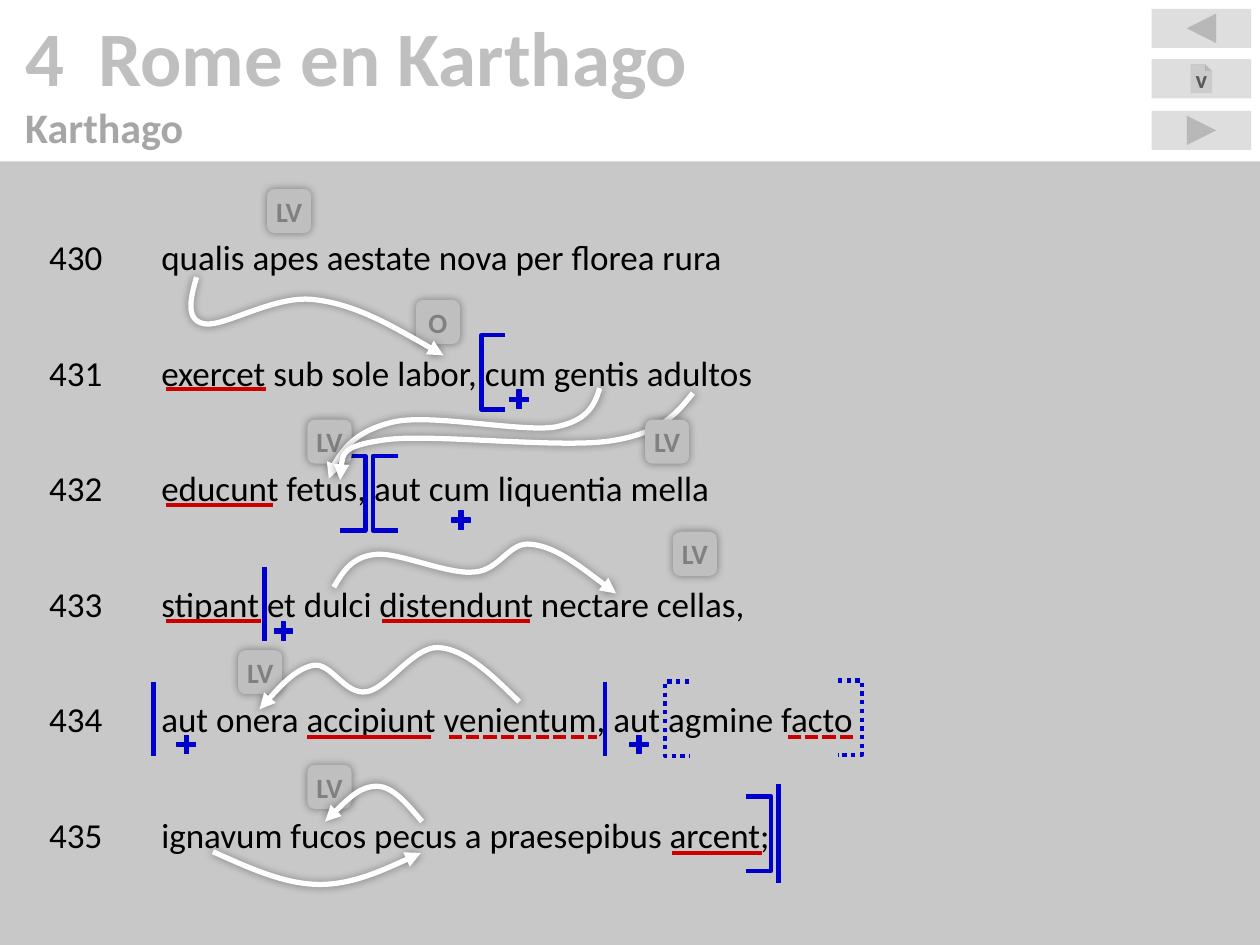
from lxml.etree import SubElement
from pptx import Presentation
from pptx.dml.color import RGBColor
from pptx.enum.dml import MSO_LINE
from pptx.enum.shapes import MSO_CONNECTOR, MSO_SHAPE
from pptx.enum.text import MSO_ANCHOR, MSO_AUTO_SIZE, PP_ALIGN
from pptx.oxml.ns import qn
from pptx.util import Inches, Pt

BLACK = RGBColor(0x00, 0x00, 0x00)
WHITE = RGBColor(0xFF, 0xFF, 0xFF)
BLUE = RGBColor(0x00, 0x00, 0xCC)
RED = RGBColor(0xCC, 0x00, 0x00)
SILVER = RGBColor(0xBF, 0xBF, 0xBF)
SUBTITLE_GRAY = RGBColor(0xA6, 0xA6, 0xA6)
BADGE_GRAY = RGBColor(0x80, 0x80, 0x80)
BUTTON_GRAY = RGBColor(0x59, 0x59, 0x59)

VERSES = [
    "430\tqualis apes aestate nova per florea rura",
    "431\texercet sub sole labor, cum gentis adultos",
    "432\teducunt fetus, aut cum liquentia mella",
    "433\tstipant et dulci distendunt nectare cellas,",
    "434\taut onera accipiunt venientum, aut agmine facto",
    "435\tignavum fucos pecus a praesepibus arcent;",
]
UNDERLINES = [
    (1, 1.32, 2.11, None),
    (2, 1.32, 2.17, None),
    (3, 1.32, 2.07, None),
    (3, 3.03, 4.21, None),
    (4, 2.44, 3.42, None),
    (4, 3.56, 4.74, MSO_LINE.SQUARE_DOT),
    (4, 6.25, 6.78, MSO_LINE.SQUARE_DOT),
    (5, 5.33, 6.05, None),
]
CLAUSE_BARS = [(6.18, 6.22, 7.01), (2.1, 4.5, 5.09), (1.22, 5.41, 6), (4.8, 5.41, 6)]
BRACKETS = [
    (3.82, 4.01, 2.66, None),
    (2.9, 2.7, 3.62, None),
    (2.96, 3.16, 3.62, None),
    (6.12, 5.92, 6.32, None),
    (5.28, 5.47, 5.41, MSO_LINE.ROUND_DOT),
    (6.84, 6.65, 5.4, MSO_LINE.ROUND_DOT),
]
PLUSES = [(4.02, 3.07), (3.56, 4.03), (2.15, 4.91), (1.38, 5.81), (4.97, 5.81)]
BADGES = [
    ("O", 3.3, 2.38),
    ("LV", 2.12, 1.5),
    ("LV", 2.44, 3.33),
    ("LV", 5.34, 4.22),
    ("LV", 1.89, 5.16),
    ("LV", 2.44, 6.07),
]
ARROWS = [
    [(1.56, 2.2), (1.51, 2.37), (1.47, 2.54), (1.62, 2.57), (1.78, 2.6),
     (2.19, 2.33), (2.51, 2.38), (2.83, 2.42), (3.17, 2.62), (3.52, 2.82)],
    [(4.76, 3.08), (4.72, 3.21), (4.67, 3.34), (4.4, 3.39), (4.13, 3.43),
     (3.41, 3.28), (3.12, 3.35), (2.82, 3.42), (2.61, 3.69), (2.61, 3.8)],
    [(5.5, 3.12), (5.37, 3.28), (5.25, 3.44), (4.84, 3.5), (4.43, 3.56),
     (3.41, 3.44), (3.06, 3.49), (2.7, 3.54), (2.7, 3.67), (2.7, 3.81)],
    [(2.65, 4.66), (2.72, 4.54), (2.79, 4.42), (2.98, 4.4), (3.16, 4.38),
     (3.55, 4.56), (3.76, 4.54), (3.97, 4.53), (4.04, 4.29), (4.22, 4.32),
     (4.41, 4.34), (4.65, 4.53), (4.89, 4.71)],
    [(4.12, 5.57), (3.91, 5.36), (3.69, 5.15), (3.48, 5.14), (3.28, 5.13),
     (3.07, 5.47), (2.91, 5.49), (2.74, 5.52), (2.63, 5.26), (2.49, 5.28),
     (2.35, 5.31), (2.2, 5.47), (2.06, 5.63)],
    [(3.35, 6.52), (3.23, 6.38), (3.12, 6.24), (2.99, 6.24), (2.86, 6.24),
     (2.72, 6.38), (2.58, 6.52)],
    [(1.69, 6.76), (1.98, 6.89), (2.26, 7.02), (2.54, 7.02), (2.81, 7.02),
     (3.21, 6.83), (3.34, 6.77)],
]


class VerseSlide:
    font_name = "Calibri"

    def __init__(self, deck):
        self.slide = deck.slides.add_slide(deck.slide_layouts[5])
        self.shapes = self.slide.shapes

    def style_text(self, para, size, color, bold=False):
        for span in para.runs:
            span.font.name = self.font_name
            span.font.size = Pt(size)
            span.font.bold = bold
            span.font.color.rgb = color

    def style_fill(self, shape, color, alpha=100):
        shape.fill.solid()
        shape.fill.fore_color.rgb = color
        if alpha < 100:
            tint = shape.fill._xPr.find(qn("a:solidFill"))[0]
            SubElement(tint, qn("a:alpha"), val=str(alpha * 1000))

    def style_line(self, shape, color, width, dash=None):
        shape.line.color.rgb = color
        shape.line.width = Pt(width)
        if dash is not None:
            shape.line.dash_style = dash

    def add_glow(self, shape):
        effects = shape._element.spPr.find(qn("a:effectLst"))
        shadow = SubElement(effects, qn("a:outerShdw"), blurRad=str(Pt(5)), dist="0", dir="0")
        color = SubElement(shadow, qn("a:srgbClr"), val=str(BLACK))
        SubElement(color, qn("a:alpha"), val="40000")

    def add_tab(self, para, position):
        properties = para._p.get_or_add_pPr()
        stops = SubElement(properties, qn("a:tabLst"))
        SubElement(stops, qn("a:tab"), pos=str(Inches(position)), algn="l")

    def place(self, box, left, top, width, height, inset_x, inset_y, anchor):
        box.left, box.top = Inches(left), Inches(top)
        box.width, box.height = Inches(width), Inches(height)
        frame = box.text_frame
        frame.auto_size = MSO_AUTO_SIZE.NONE
        frame.word_wrap = True
        frame.vertical_anchor = anchor
        frame.margin_left = frame.margin_right = Inches(inset_x)
        frame.margin_top = frame.margin_bottom = Inches(inset_y)
        return frame

    def title(self, heading, subheading):
        frame = self.place(self.shapes.title, 0, 0, 10, 1.28, 0.2, 0.2, MSO_ANCHOR.MIDDLE)
        frame.text = f"{heading}\n{subheading}"
        self.add_tab(frame.paragraphs[0], 0.58)
        for para, size, color in zip(frame.paragraphs, (44, 24), (SILVER, SUBTITLE_GRAY)):
            para.alignment = PP_ALIGN.LEFT
            self.style_text(para, size, color, bold=True)

    def verses(self, lines):
        panel = self.preset(MSO_SHAPE.RECTANGLE, 0, 1.28, 10, 6.22, SILVER, 85)
        frame = self.place(panel, 0, 1.28, 10, 6.22, 0.39, 0.59, MSO_ANCHOR.TOP)
        frame.text = "\n".join(lines)
        for para in frame.paragraphs:
            self.add_tab(para, 0.89)
            para.alignment = PP_ALIGN.LEFT
            para.space_after = Pt(42)
            self.style_text(para, 20, BLACK)

    def preset(self, kind, left, top, width, height, color, alpha=100):
        shape = self.shapes.add_shape(
            kind, Inches(left), Inches(top), Inches(width), Inches(height))
        self.style_fill(shape, color, alpha)
        shape.line.fill.background()
        shape.shadow.inherit = False
        return shape

    def label(self, shape, text, size, color):
        para = shape.text_frame.paragraphs[0]
        para.text = text
        para.alignment = PP_ALIGN.CENTER
        self.style_text(para, size, color, bold=True)

    def button(self, kind, top, text=None):
        shape = self.preset(kind, 9.14, top, 0.79, 0.31, SILVER, 50)
        if text:
            self.label(shape, text, 14, BUTTON_GRAY)

    def badge(self, text, left, top):
        shape = self.preset(MSO_SHAPE.ROUNDED_RECTANGLE, left, top, 0.35, 0.35, SILVER)
        self.add_glow(shape)
        self.place(shape, left, top, 0.35, 0.35, 0, 0, MSO_ANCHOR.MIDDLE)
        self.label(shape, text, 16, BADGE_GRAY)

    def plus(self, left, top):
        shape = self.preset(MSO_SHAPE.MATH_PLUS, left, top, 0.2, 0.2, BLUE)
        shape.adjustments[0] = 0.172
        self.style_line(shape, BLUE, 0)

    def rule(self, start, end, color, dash=None):
        line = self.shapes.add_connector(
            MSO_CONNECTOR.STRAIGHT, *map(Inches, start), *map(Inches, end))
        self.style_line(line, color, 2.5, dash)
        SubElement(line._element.spPr, qn("a:effectLst"))

    def outline(self, points, color, width, dash=None):
        corners = [(Inches(x), Inches(y)) for x, y in points]
        builder = self.shapes.build_freeform(*corners[0])
        builder.add_line_segments(corners[1:], close=False)
        shape = builder.convert_to_shape()
        shape.fill.background()
        self.style_line(shape, color, width, dash)
        shape.shadow.inherit = False
        return shape

    def bracket(self, spine, tip, top, dash=None):
        bottom = top + 0.59
        points = [(tip, top), (spine, top), (spine, bottom), (tip, bottom)]
        self.outline(points, BLUE, 2.5, dash)

    def arrow(self, points):
        shape = self.outline(points, WHITE, 3)
        segments = list(shape._element.iter(qn("a:lnTo")))
        for first in range(0, len(segments), 3):
            curve = SubElement(segments[first].getparent(), qn("a:cubicBezTo"))
            for segment in segments[first:first + 3]:
                curve.append(segment[0])
                segment.getparent().remove(segment)
        SubElement(shape.line._get_or_add_ln(), qn("a:tailEnd"), type="triangle")
        self.add_glow(shape)


def main():
    deck = Presentation()
    deck.slide_width, deck.slide_height = Inches(10), Inches(7.5)
    page = VerseSlide(deck)
    page.title("4\tRome en Karthago", "Karthago")
    page.verses(VERSES)
    page.button(MSO_SHAPE.ACTION_BUTTON_BACK_OR_PREVIOUS, 0.07)
    page.button(MSO_SHAPE.ACTION_BUTTON_DOCUMENT, 0.47, "v")
    page.button(MSO_SHAPE.ACTION_BUTTON_FORWARD_OR_NEXT, 0.88)
    for row, left, right, dash in UNDERLINES:
        height = 2.17 + 0.92 * row
        page.rule((left, height), (right, height), RED, dash)
    for left, top, bottom in CLAUSE_BARS:
        page.rule((left, top), (left, bottom), BLUE)
    for bracket in BRACKETS:
        page.bracket(*bracket)
    for plus in PLUSES:
        page.plus(*plus)
    for badge in BADGES:
        page.badge(*badge)
    for points in ARROWS:
        page.arrow(points)
    page.badge("LV", 5.12, 3.33)
    deck.save("out.pptx")


if __name__ == "__main__":
    main()
